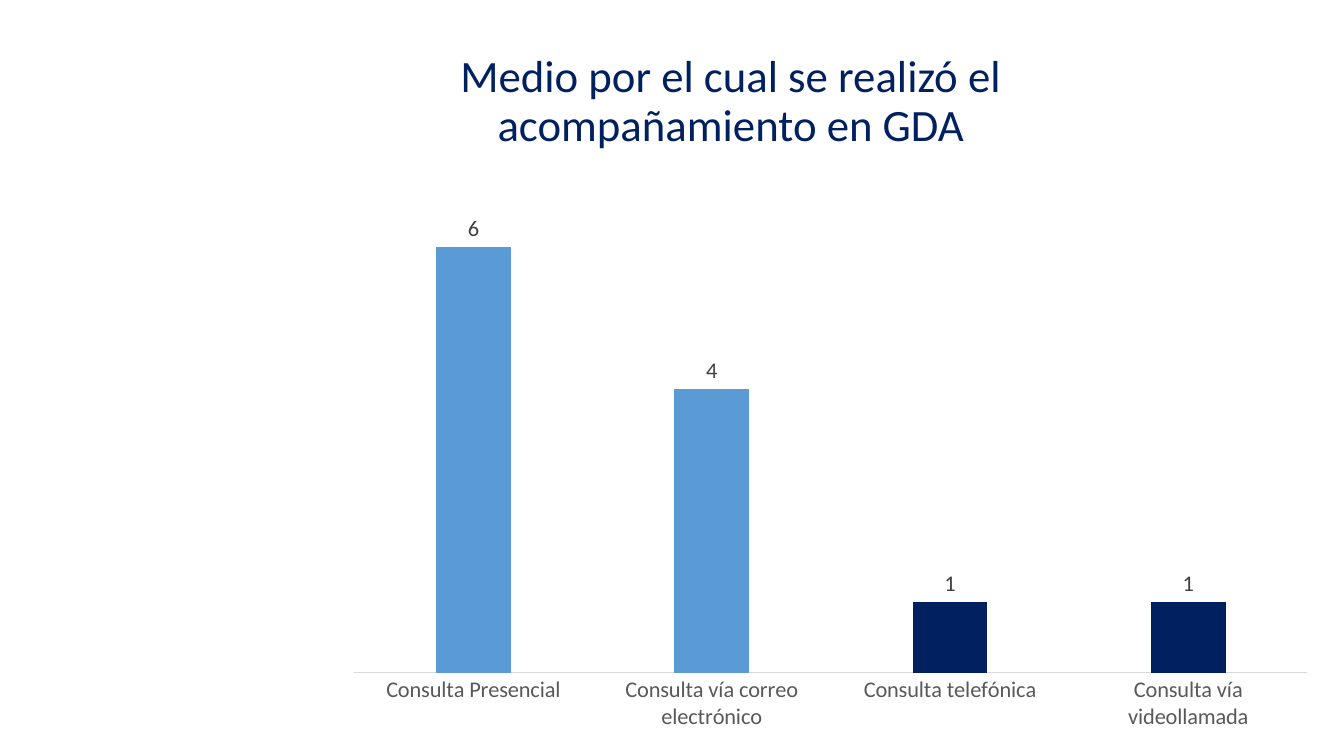
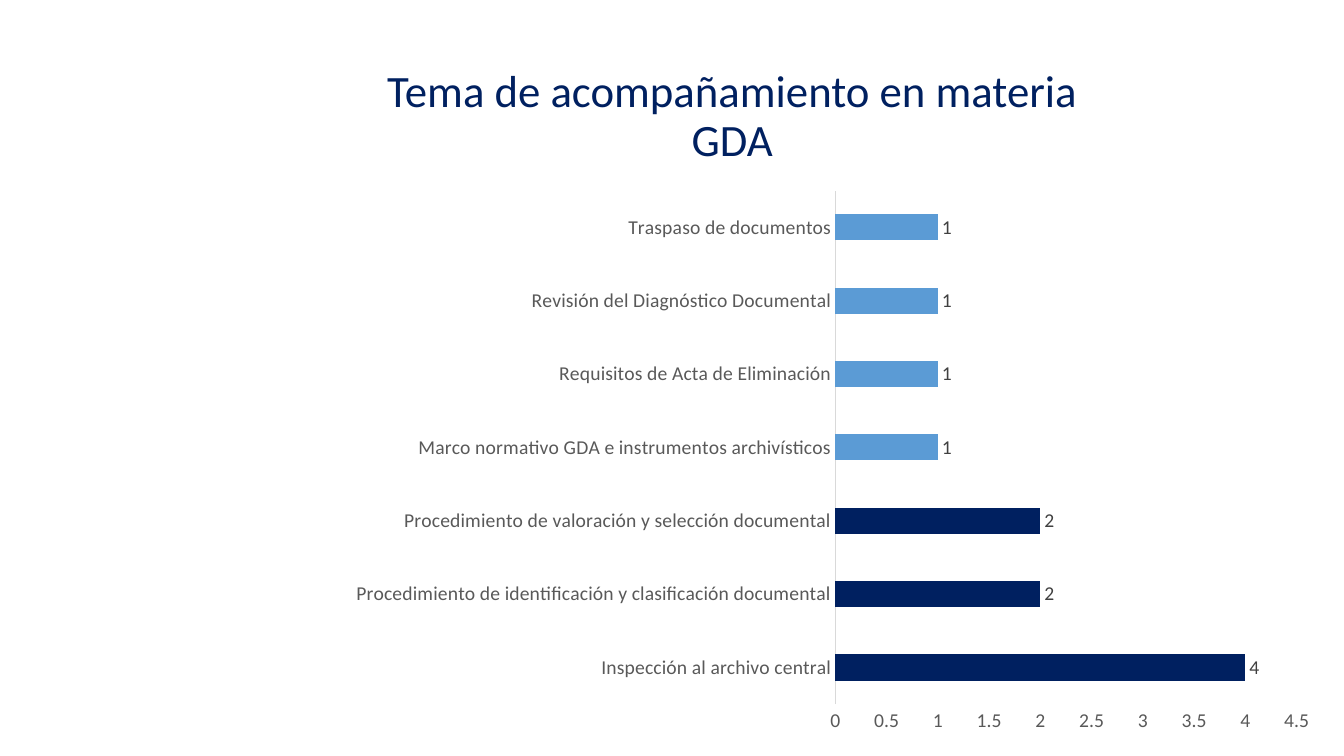
"""Build two slides with bar charts on the GDA support given."""
from pptx import Presentation
from pptx.chart.data import CategoryChartData
from pptx.dml.color import RGBColor
from pptx.enum import chart as ch, text as tx
from pptx.util import Cm, Pt

FACE = "Calibri"
NAVY, BLUE = "002060", "5B9BD5"
GREY, DARK, PALE = "595959", "404040", "D9D9D9"


def color(code):
    return RGBColor.from_string(code)


def style(font, size, code):
    font.name, font.size, font.bold = FACE, Pt(size), False
    font.color.rgb = color(code)


slides = [
    dict(
        title="Medio por el cual se realizó el acompañamiento en GDA",
        head=(9.86, 1.02, 17.12, 3.12),
        area=(8.43, 4.14, 25.02, 14.58),
        kind=ch.XL_CHART_TYPE.COLUMN_CLUSTERED,
        size=16, gap=219, lap=-27, top=7, step=1, scale=False,
        data={
            "Consulta Presencial": 6,
            "Consulta vía correo electrónico": 4,
            "Consulta telefónica": 1,
            "Consulta vía videollamada": 1,
        },
        navy=(2, 3),
    ),
    dict(
        title="Tema de acompañamiento en materia GDA",
        head=(9.12, 1.4, 18.67, 3.12),
        area=(8.48, 4.52, 25.02, 14.22),
        kind=ch.XL_CHART_TYPE.BAR_CLUSTERED,
        size=14, gap=182, lap=0, top=4.5, step=0.5, scale=True,
        data={
            "Inspección al archivo central": 4,
            "Procedimiento de identificación y clasificación documental": 2,
            "Procedimiento de valoración y selección documental": 2,
            "Marco normativo GDA e instrumentos archivísticos": 1,
            "Requisitos de Acta de Eliminación": 1,
            "Revisión del Diagnóstico Documental": 1,
            "Traspaso de documentos": 1,
        },
        navy=(0, 1, 2),
    ),
]

deck = Presentation()
deck.slide_width, deck.slide_height = Cm(33.87), Cm(19.05)

for item in slides:
    slide = deck.slides.add_slide(deck.slide_layouts[5])
    size = item["size"]

    title = slide.shapes.title
    title.left, title.top, title.width, title.height = map(Cm, item["head"])
    frame = title.text_frame
    frame.text = item["title"]
    frame.word_wrap = True
    frame.auto_size = tx.MSO_AUTO_SIZE.NONE
    frame.vertical_anchor = tx.MSO_ANCHOR.MIDDLE
    line = frame.paragraphs[0]
    line.alignment = tx.PP_ALIGN.CENTER
    line.line_spacing = 0.9
    style(line.font, 32, NAVY)

    data = CategoryChartData()
    data.categories = list(item["data"])
    data.add_series("Series 1", list(item["data"].values()))
    chart = slide.shapes.add_chart(
        item["kind"], *map(Cm, item["area"]), data).chart
    style(chart.font, size, "000000")
    chart.has_legend = chart.has_title = False

    names, scale = chart.category_axis, chart.value_axis
    for axis in (names, scale):
        axis.has_major_gridlines = False
        axis.major_tick_mark = axis.minor_tick_mark = ch.XL_TICK_MARK.NONE
        style(axis.tick_labels.font, size, GREY)
    names.format.line.color.rgb = color(PALE)
    names.format.line.width = Pt(0.75)
    scale.format.line.fill.background()
    scale.minimum_scale, scale.maximum_scale = 0, item["top"]
    scale.major_unit = item["step"]
    scale.visible = item["scale"]

    plot = chart.plots[0]
    plot.vary_by_categories = False
    plot.gap_width, plot.overlap = item["gap"], item["lap"]
    bars = plot.series[0]
    bars.format.fill.solid()
    bars.format.fill.fore_color.rgb = color(BLUE)
    for spot in item["navy"]:
        fill = bars.points[spot].format.fill
        fill.solid()
        fill.fore_color.rgb = color(NAVY)
    labels = bars.data_labels
    labels.show_value = True
    labels.position = ch.XL_LABEL_POSITION.OUTSIDE_END
    style(labels.font, size, DARK)

deck.save("out.pptx")
